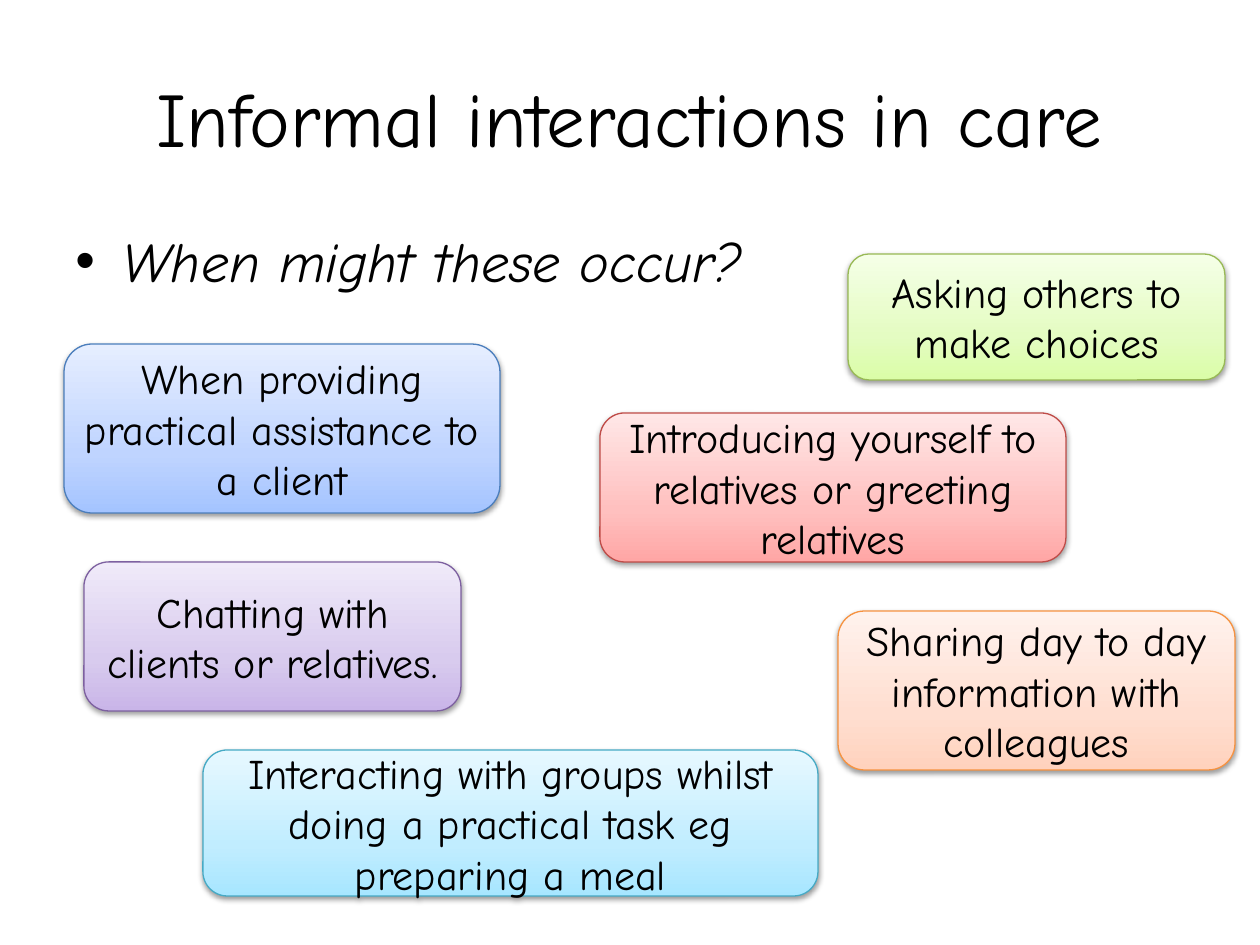
from copy import deepcopy

from lxml import etree
from pptx import Presentation
from pptx import util as u
from pptx.dml.color import RGBColor
from pptx.enum import shapes, text
from pptx.oxml.ns import qn

PX = 914400 / 126
FONT = "Comic Neue"
BLACK = RGBColor(0, 0, 0)

TITLE = "Informal interactions in care"
QUESTION = "When might these occur?"
BULLET_INDENT = 47

# Outline, then gradient colours from bottom to top
BLUE, GREEN, PURPLE, ORANGE, RED, AQUA = (
    [RGBColor.from_string(code) for code in codes.split()]
    for codes in (
        "4B7EBC A4C4FF BFD4FF E6EEFF",
        "98B955 DAFDA7 E4FCC2 F5FFE7",
        "7D60A0 C9B5E8 D8CBEE F0EAF9",
        "F69240 FFD2BD FFDED0 FFF2ED",
        "BF4C48 FFA6A5 FFC0BF FFE7E7",
        "46AAC5 A7E6FF C1EDFF E7F8FF",
    )
)
STOPS = (0, 0.35, 1)

# Wording, colours, (left, top, width, height) in px
OCCASIONS = [
    ("When providing practical assistance to a client", BLUE, (64, 344, 436, 169)),
    ("Asking others to make choices", GREEN, (848, 254, 377, 126)),
    ("Chatting with clients or relatives.", PURPLE, (84, 562, 377, 149)),
    ("Sharing day to day information with colleagues", ORANGE, (838, 611, 397, 159)),
    ("Introducing yourself to relatives or greeting relatives", RED, (600, 413, 466, 149)),
    ("Interacting with groups whilst doing a practical task eg preparing a meal",
     AQUA, (203, 750, 615, 146)),
]


def px(*lengths):
    return [round(length * PX) for length in lengths]


def write(shape, wording, size, align, anchor):
    frame = shape.text_frame
    frame.word_wrap = True
    frame.vertical_anchor = anchor
    paragraph = frame.paragraphs[0]
    paragraph.text = wording
    paragraph.alignment = align
    paragraph.font.name = FONT
    paragraph.font.size = u.Pt(size)
    paragraph.font.color.rgb = BLACK
    return paragraph


def add_bullet(paragraph):
    properties = paragraph._p.get_or_add_pPr()
    indent, = px(BULLET_INDENT)
    properties.set("marL", str(indent))
    properties.set("indent", str(-indent))
    bullet_font = etree.Element(qn("a:buFont"), typeface="Arial")
    bullet = etree.Element(qn("a:buChar"), char="•")
    defaults = properties.find(qn("a:defRPr"))
    defaults.addprevious(bullet_font)
    defaults.addprevious(bullet)


def fill_gradient(shape, colours):
    shape.fill.gradient()
    shape.fill.gradient_angle = 90
    stop_list = shape._element.spPr.find(".//" + qn("a:gsLst"))
    stop_list.append(deepcopy(stop_list[-1]))
    for stop, position, colour in zip(shape.fill.gradient_stops, STOPS, colours):
        stop.position = position
        stop.color.rgb = colour


def add_shadow(shape):
    shape.shadow.inherit = False
    effects = shape._element.spPr.find(qn("a:effectLst"))
    shadow = etree.SubElement(effects, qn("a:outerShdw"), blurRad="40000",
                              dist="20000", dir="5400000", rotWithShape="0")
    colour = etree.SubElement(shadow, qn("a:srgbClr"), val="000000")
    etree.SubElement(colour, qn("a:alpha"), val="38000")


def add_occasion(slide, wording, colours, place):
    outline, *gradient = colours
    shape = slide.shapes.add_shape(shapes.MSO_SHAPE.ROUNDED_RECTANGLE, *px(*place))
    fill_gradient(shape, gradient)
    shape.line.color.rgb = outline
    shape.line.width = u.Pt(0.75)
    add_shadow(shape)
    write(shape, wording, 24, text.PP_ALIGN.CENTER, text.MSO_ANCHOR.MIDDLE)


def main():
    presentation = Presentation()
    presentation.slide_width, presentation.slide_height = px(1260, 945)
    slide = presentation.slides.add_slide(presentation.slide_layouts[6])

    title = slide.shapes.add_textbox(*px(63, 38, 1134, 158))
    write(title, TITLE, 44, text.PP_ALIGN.CENTER, text.MSO_ANCHOR.MIDDLE)

    body = slide.shapes.add_textbox(*px(63, 220, 1134, 624))
    question = write(body, QUESTION, 32, text.PP_ALIGN.LEFT, text.MSO_ANCHOR.TOP)
    question.font.italic = True
    add_bullet(question)

    for occasion in OCCASIONS:
        add_occasion(slide, *occasion)

    presentation.save("out.pptx")


if __name__ == "__main__":
    main()
